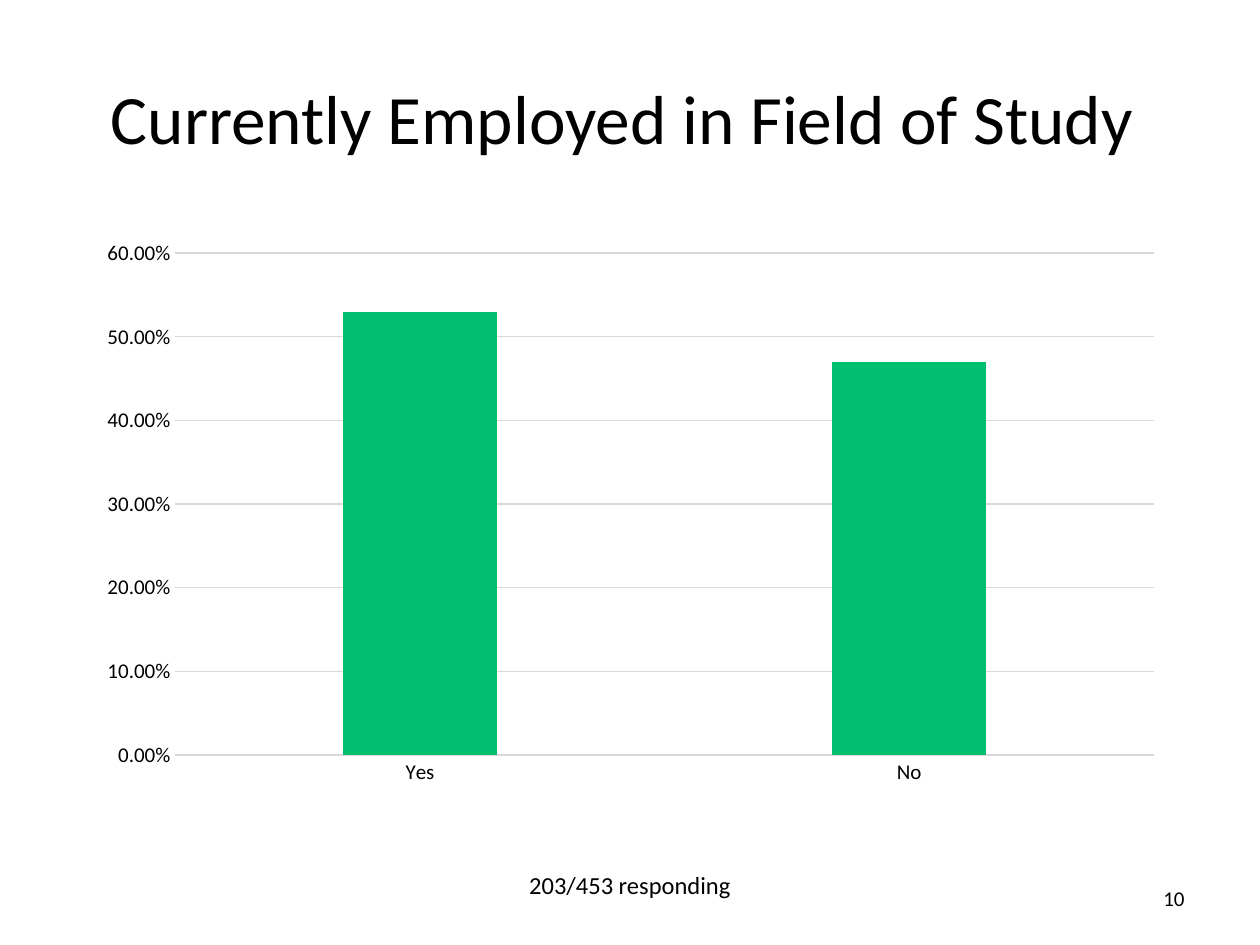
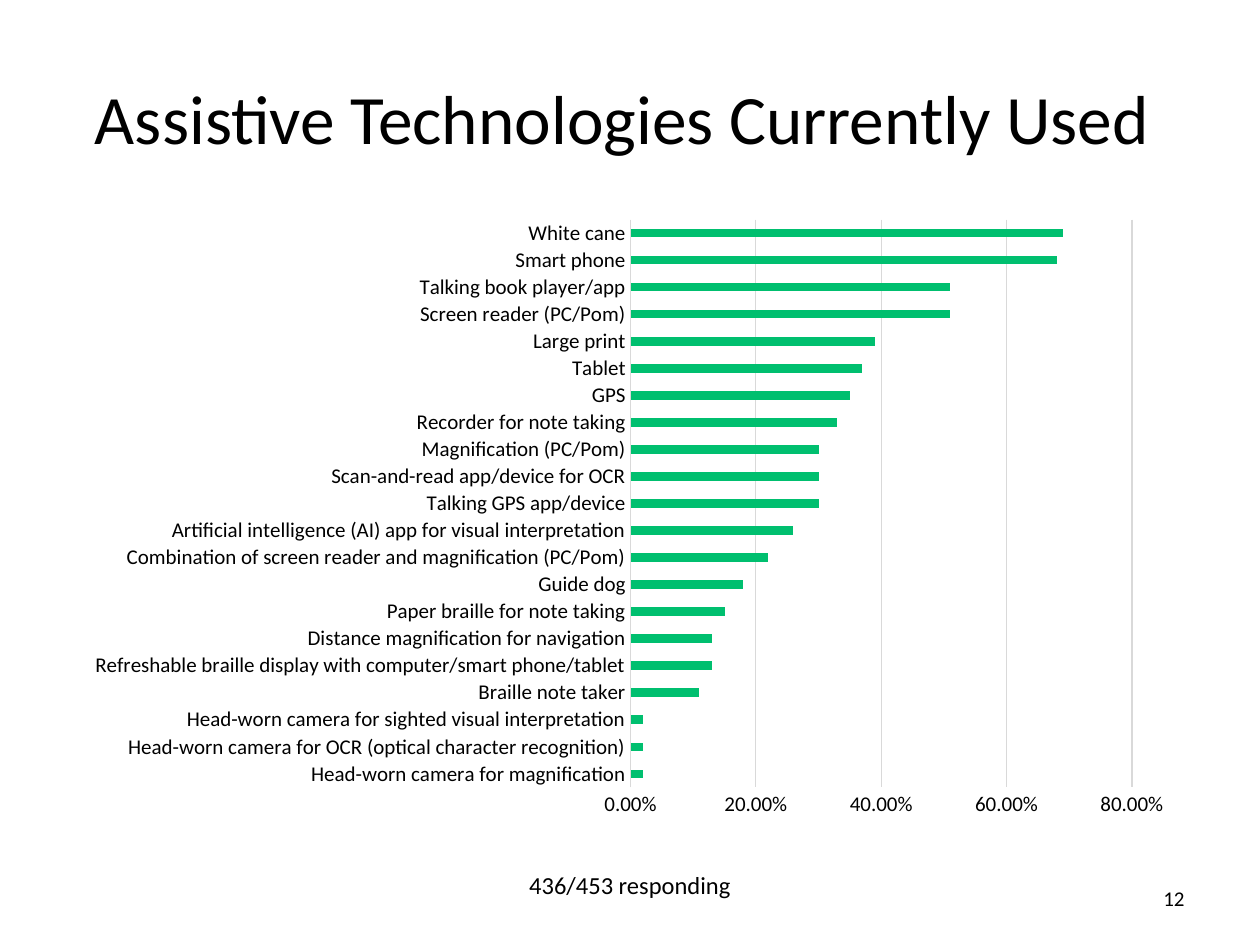
"""Build two survey result slides, each with a title, a bar chart and a response count."""

from dataclasses import dataclass
from typing import Optional

from pptx import Presentation
from pptx.chart.axis import _BaseAxis as Axis
from pptx.chart.chart import Chart
from pptx.chart.data import CategoryChartData
from pptx.dml.color import RGBColor
from pptx.enum.chart import XL_CHART_TYPE as ChartType, XL_TICK_MARK as TickMark
from pptx.enum.text import MSO_ANCHOR as Anchor, MSO_AUTO_SIZE as AutoSize, PP_ALIGN as Align
from pptx.oxml import parse_xml
from pptx.oxml.ns import nsdecls
from pptx.presentation import Presentation as Deck
from pptx.slide import Slide
from pptx.text.text import Font, TextFrame
from pptx.util import Inches, Pt


@dataclass(frozen=True)
class Theme:
    font: str = "Calibri"
    text: RGBColor = RGBColor(0x00, 0x00, 0x00)
    background: RGBColor = RGBColor(0xFF, 0xFF, 0xFF)
    bar: RGBColor = RGBColor(0x00, 0xBF, 0x6F)
    grid: RGBColor = RGBColor(0xD9, 0xD9, 0xD9)
    title_size: float = 39.6
    responding_size: float = 14
    small_size: float = 12
    chart_size: float = 10
    grid_width: float = 0.75


@dataclass(frozen=True)
class Box:
    left: float
    top: float
    width: float
    height: float

    def lengths(self) -> tuple[Inches, ...]:
        return tuple(Inches(n) for n in (self.left, self.top, self.width, self.height))


@dataclass(frozen=True)
class SurveyQuestion:
    title: str
    responding: str
    page: str
    chart_type: ChartType
    chart_box: Box
    answers: dict[str, float]
    maximum: float
    major_unit: float
    overlap: int = 0
    plot_box: Optional[Box] = None


THEME = Theme()
TITLE_ONLY = 5
TITLE_BOX = Box(0.5, 0.3, 9, 1.25)
RESPONDING_BOX = Box(4.09, 6.86, 1.82, 0.34)
PAGE_BOX = Box(7.7, 6.93, 1.8, 0.4)
BAR_GAP = 219
PERCENT = "0.00%"

QUESTIONS = (
    SurveyQuestion(
        title="Currently Employed in Field of Study ",
        responding="203/453 responding",
        page="10",
        chart_type=ChartType.COLUMN_CLUSTERED,
        chart_box=Box(0.68, 1.82, 8.65, 4.5),
        answers={"Yes": 0.53, "No": 0.47},
        maximum=0.6,
        major_unit=0.1,
        overlap=-27,
    ),
    SurveyQuestion(
        title="Assistive Technologies Currently Used ",
        responding="436/453 responding",
        page="12",
        chart_type=ChartType.BAR_CLUSTERED,
        chart_box=Box(0.68, 1.59, 8.65, 5.12),
        answers={
            "Head-worn camera for magnification": 0.02,
            "Head-worn camera for OCR (optical character recognition)": 0.02,
            "Head-worn camera for sighted visual interpretation": 0.02,
            "Braille note taker": 0.11,
            "Refreshable braille display with computer/smart phone/tablet": 0.13,
            "Distance magnification for navigation": 0.13,
            "Paper braille for note taking": 0.15,
            "Guide dog": 0.18,
            "Combination of screen reader and magnification (PC/Pom)": 0.22,
            "Artificial intelligence (AI) app for visual interpretation": 0.26,
            "Talking GPS app/device": 0.3,
            "Scan-and-read app/device for OCR": 0.3,
            "Magnification (PC/Pom)": 0.3,
            "Recorder for note taking": 0.33,
            "GPS": 0.35,
            "Tablet": 0.37,
            "Large print": 0.39,
            "Screen reader (PC/Pom)": 0.51,
            "Talking book player/app": 0.51,
            "Smart phone": 0.68,
            "White cane": 0.69,
        },
        maximum=0.8,
        major_unit=0.2,
        plot_box=Box(0.5, 0.03, 0.46, 0.88),
    ),
)


def style_font(font: Font, size: float) -> None:
    font.name = THEME.font
    font.size = Pt(size)
    font.bold = False
    font.color.rgb = THEME.text


def write_line(frame: TextFrame, text: str, size: float, align: Align, anchor: Anchor) -> None:
    frame.vertical_anchor = anchor
    paragraph = frame.paragraphs[0]
    paragraph.alignment = align
    run = paragraph.add_run()
    run.text = text
    style_font(run.font, size)


def add_title(slide: Slide, text: str) -> None:
    title = slide.shapes.title
    title.left, title.top, title.width, title.height = TITLE_BOX.lengths()
    title.text_frame.auto_size = AutoSize.NONE
    write_line(title.text_frame, text, THEME.title_size, Align.CENTER, Anchor.MIDDLE)


def add_responding(slide: Slide, text: str) -> None:
    frame = slide.shapes.add_textbox(*RESPONDING_BOX.lengths()).text_frame
    frame.word_wrap = False
    frame.auto_size = AutoSize.SHAPE_TO_FIT_TEXT
    write_line(frame, text, THEME.responding_size, Align.CENTER, Anchor.TOP)


def add_page_number(slide: Slide, text: str) -> None:
    frame = slide.shapes.add_textbox(*PAGE_BOX.lengths()).text_frame
    frame.word_wrap = True
    write_line(frame, text, THEME.small_size, Align.RIGHT, Anchor.MIDDLE)


def style_axis(axis: Axis) -> None:
    axis.major_tick_mark = TickMark.NONE
    axis.minor_tick_mark = TickMark.NONE
    style_font(axis.tick_labels.font, THEME.small_size)


def place_plot(chart: Chart, box: Box) -> None:
    plot_area = chart.element.xpath("c:chart/c:plotArea")[0]
    for layout in plot_area.xpath("c:layout"):
        plot_area.remove(layout)
    plot_area.insert(0, parse_xml(
        f'<c:layout {nsdecls("c")}><c:manualLayout><c:layoutTarget val="inner"/>'
        '<c:xMode val="edge"/><c:yMode val="edge"/>'
        f'<c:x val="{box.left}"/><c:y val="{box.top}"/>'
        f'<c:w val="{box.width}"/><c:h val="{box.height}"/>'
        '</c:manualLayout></c:layout>'
    ))


def add_answer_chart(slide: Slide, question: SurveyQuestion) -> None:
    data = CategoryChartData(number_format=PERCENT)
    data.categories = list(question.answers)
    data.add_series("Series 1", list(question.answers.values()))
    chart = slide.shapes.add_chart(
        question.chart_type, *question.chart_box.lengths(), data
    ).chart
    chart.has_title = False
    chart.has_legend = False
    style_font(chart.font, THEME.chart_size)

    plot = chart.plots[0]
    plot.gap_width = BAR_GAP
    plot.overlap = question.overlap
    plot.vary_by_categories = False
    fill = plot.series[0].format.fill
    fill.solid()
    fill.fore_color.rgb = THEME.bar

    categories, values = chart.category_axis, chart.value_axis
    for axis in (categories, values):
        style_axis(axis)
    values.minimum_scale = 0
    values.maximum_scale = question.maximum
    values.major_unit = question.major_unit
    values.tick_labels.number_format = PERCENT
    values.tick_labels.number_format_is_linked = False
    values.format.line.fill.background()
    values.has_major_gridlines = True
    for line in (categories.format.line, values.major_gridlines.format.line):
        line.color.rgb = THEME.grid
        line.width = Pt(THEME.grid_width)
    if question.plot_box:
        place_plot(chart, question.plot_box)


def add_question_slide(presentation: Deck, question: SurveyQuestion) -> None:
    slide = presentation.slides.add_slide(presentation.slide_layouts[TITLE_ONLY])
    slide.background.fill.solid()
    slide.background.fill.fore_color.rgb = THEME.background
    add_title(slide, question.title)
    add_answer_chart(slide, question)
    add_responding(slide, question.responding)
    add_page_number(slide, question.page)


def main() -> None:
    presentation = Presentation()
    presentation.slide_width = Inches(10)
    presentation.slide_height = Inches(7.5)
    for question in QUESTIONS:
        add_question_slide(presentation, question)
    presentation.save("out.pptx")


if __name__ == "__main__":
    main()
